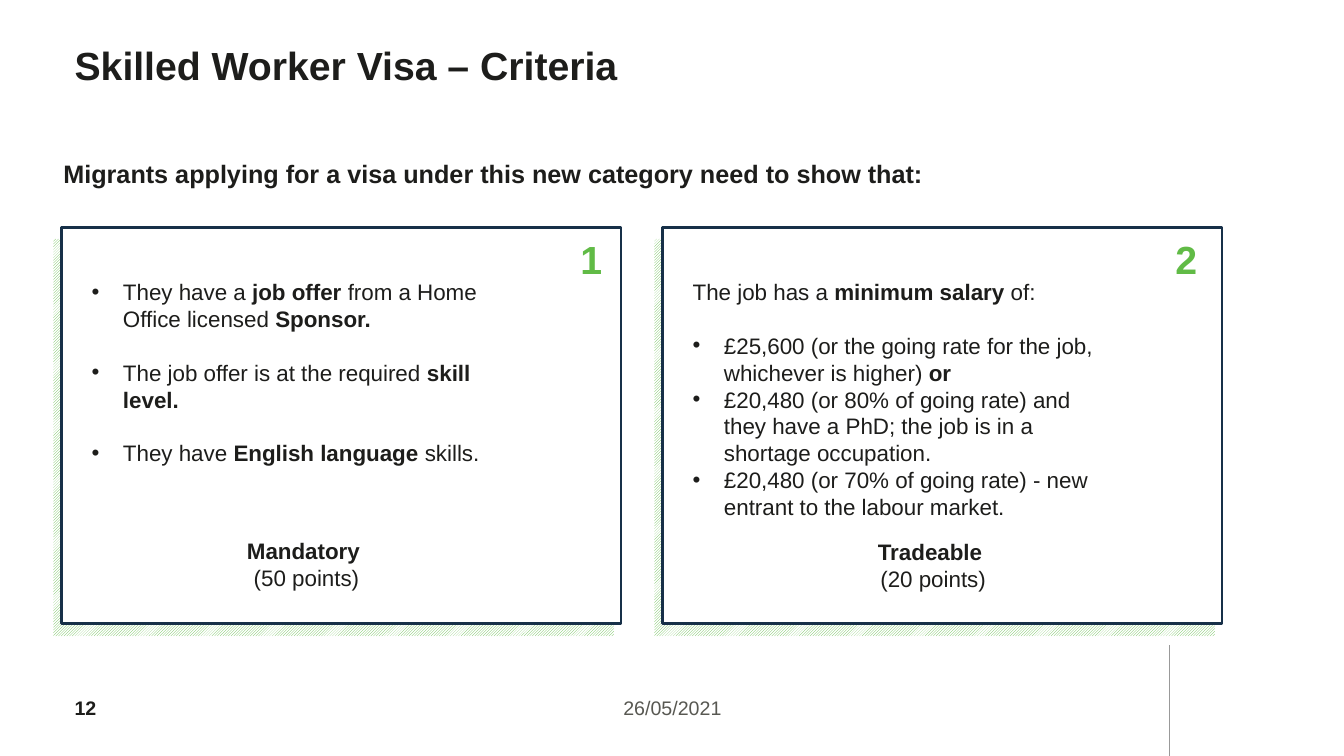
from lxml import etree
from pptx import Presentation
from pptx.dml.color import RGBColor
from pptx.enum.dml import MSO_PATTERN
from pptx.enum.shapes import MSO_CONNECTOR, MSO_SHAPE
from pptx.enum.text import MSO_ANCHOR, MSO_AUTO_SIZE, PP_ALIGN
from pptx.oxml.ns import qn
from pptx.util import Pt

PX = 9144
COLORS = {"ink": "1D1D1B", "grey": "585852", "rule": "999999",
          "green": "61BB46", "navy": "173048", "white": "FFFFFF"}
NO_INSETS = {"margin_left": 0, "margin_right": 0, "margin_top": 0, "margin_bottom": 0}
CENTER, MIDDLE = PP_ALIGN.CENTER, MSO_ANCHOR.MIDDLE
GAP = 19.2


def rgb(name):
    return RGBColor.from_string(COLORS[name])


class SlideBuilder:
    """Draws styled elements on one slide, with lengths in px."""

    font, leading, indent = "Arial", 1.2, 31

    def __init__(self, s):
        self.s = s

    def box(self, *lengths):
        return [n * PX for n in lengths]

    def fill_text(self, sp, paragraphs, size=16, color="ink", bold=False,
                  align=PP_ALIGN.LEFT, **frame):
        tf = sp.text_frame
        values = {"word_wrap": True, "auto_size": MSO_AUTO_SIZE.NONE,
                  "vertical_anchor": MSO_ANCHOR.TOP, **frame}
        for name, value in values.items():
            setattr(tf, name, value)
        for i, (text, bullet, before) in enumerate(paragraphs):
            p = tf.paragraphs[0] if i == 0 else tf.add_paragraph()
            self.bullet(p, bullet)
            style = {"alignment": align, "space_before": Pt(before),
                     "line_spacing": Pt(round(size * self.leading, 1))}
            for name, value in style.items():
                setattr(p, name, value)
            for j, part in enumerate(text.split("**")):
                if part:
                    r = p.add_run()
                    r.text = part
                    font = {"name": self.font, "size": Pt(size), "bold": bold or j % 2 == 1}
                    for name, value in font.items():
                        setattr(r.font, name, value)
                    r.font.color.rgb = rgb(color)

    def bullet(self, p, shown):
        pPr = p._p.get_or_add_pPr()
        indent = self.indent * PX if shown else 0
        pPr.set("marL", str(indent))
        pPr.set("indent", str(-indent))
        if shown:
            etree.SubElement(pPr, qn("a:buFont")).set("typeface", self.font)
            etree.SubElement(pPr, qn("a:buChar")).set("char", "•")
        else:
            etree.SubElement(pPr, qn("a:buNone"))

    def placeholder(self, idx, place, paragraphs, **style):
        sp = self.s.placeholders[idx]
        sp.left, sp.top, sp.width, sp.height = self.box(*place)
        sp.element.getparent().append(sp.element)
        self.fill_text(sp, paragraphs, **style)

    def text(self, place, *lines, **style):
        sp = self.s.shapes.add_textbox(*self.box(*place))
        self.fill_text(sp, [(line, False, 0) for line in lines], **style)

    def rect(self, *place):
        sp = self.s.shapes.add_shape(MSO_SHAPE.RECTANGLE, *self.box(*place))
        sp.shadow.inherit = False
        return sp

    def card(self, left):
        back = self.rect(left - 8, 237, 556, 394)
        back.fill.patterned()
        back.fill.pattern = MSO_PATTERN.DARK_UPWARD_DIAGONAL
        back.fill.fore_color.rgb = rgb("green")
        back.fill.back_color.rgb = rgb("white")
        back.line.fill.background()
        front = self.rect(left, 226, 555, 393)
        front.fill.solid()
        front.fill.fore_color.rgb = rgb("white")
        front.line.color.rgb = rgb("navy")
        front.line.width = Pt(2)

    def line(self, *ends):
        c = self.s.shapes.add_connector(MSO_CONNECTOR.STRAIGHT, *self.box(*ends))
        c.line.color.rgb = rgb("rule")
        c.line.width = Pt(1.25)
        etree.SubElement(c.element.spPr, qn("a:effectLst"))


def main():
    prs = Presentation()
    prs.slide_width, prs.slide_height = 1333 * PX, 750 * PX
    b = SlideBuilder(prs.slides.add_slide(prs.slide_layouts[3]))

    b.text((442, 686, 450, 34), "26/05/2021", size=14, color="grey", align=CENTER)
    b.line(1160, 640, 1160, 750)
    b.text((74, 682, 74, 40), "12", size=14, bold=True, vertical_anchor=MIDDLE, **NO_INSETS)
    b.placeholder(0, (74, 41, 1066, 96), [("Skilled Worker Visa – Criteria", False, 0)],
                  size=28, bold=True, **NO_INSETS)
    b.text((53, 152, 1062, 40),
           "Migrants applying for a visa under this new category need to show that:",
           size=18, bold=True)

    mandatory = [
        ("They have a **job offer **from a Home Office licensed **Sponsor.**", True, 0),
        ("The job offer is at the required **skill level.**", True, GAP),
        ("They have **English language **skills.", True, GAP),
    ]
    tradeable = [
        ("The job has a **minimum salary **of:", False, 0),
        ("£25,600 (or the going rate for the job, whichever is higher) **or**", True, GAP),
        ("£20,480 (or 80% of going rate) and they have a PhD; "
         "the job is in a shortage occupation.", True, 0),
        ("£20,480 (or 70% of going rate) - new entrant to the labour market.", True, 0),
    ]
    cards = [
        (61, (81, 271, 446, 199), mandatory, 558, (234, 528, 140, 64), "Mandatory ", "(50 points)"),
        (657, (677, 271, 422, 252), tradeable, 1148, (860, 529, 131, 64), "Tradeable ", "(20 points)"),
    ]
    for number, (left, place, items, number_left, label, kind, points) in enumerate(cards, 1):
        b.card(left)
        b.placeholder(number, place, items)
        b.text((number_left, 228, 57, 57), str(number), size=28, color="green", bold=True,
               align=CENTER, vertical_anchor=MIDDLE)
        b.text(label, f"**{kind}**", points, align=CENTER, word_wrap=False)

    prs.save("out.pptx")


if __name__ == "__main__":
    main()
